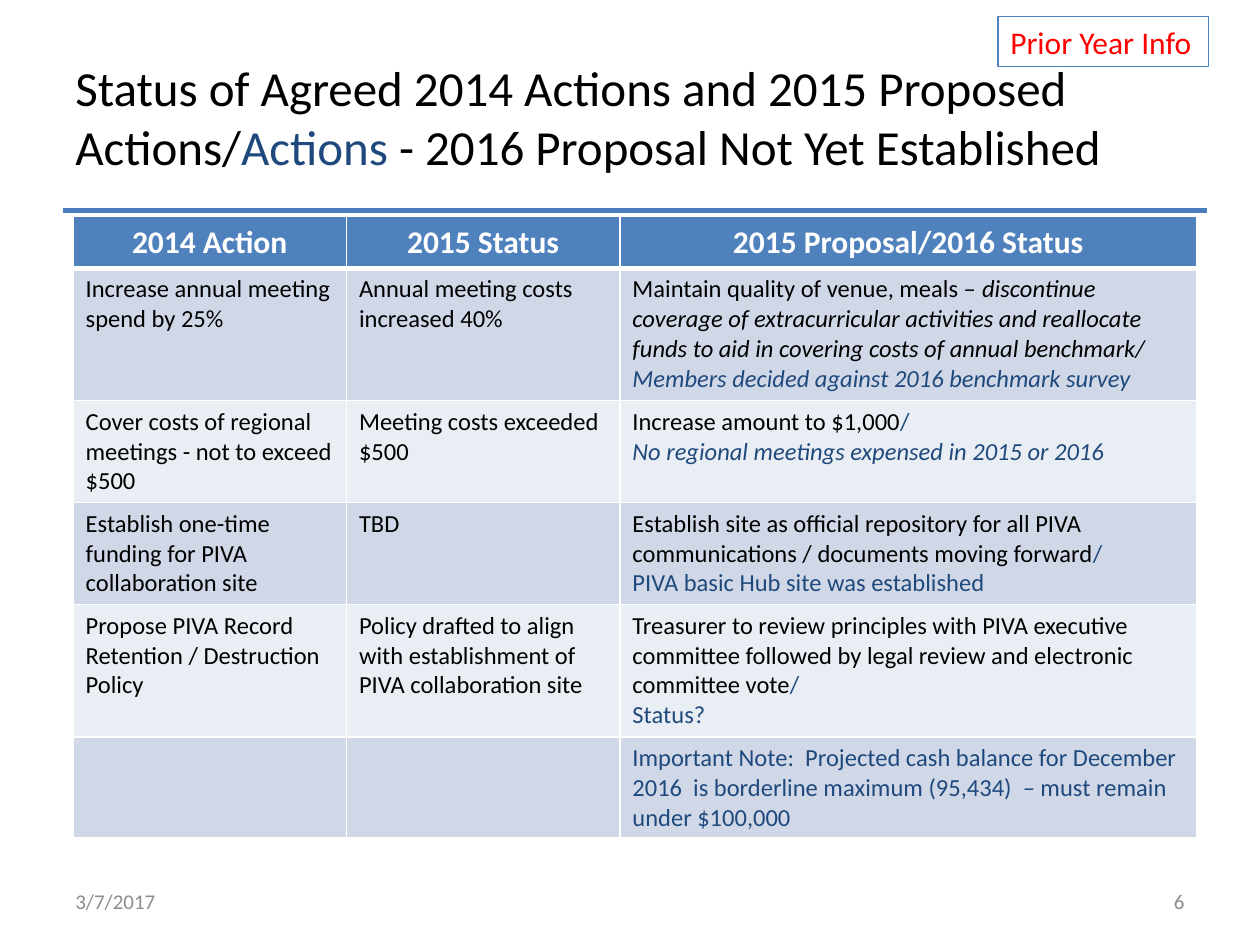
import pptx
import pptx.util
import pptx.dml.color
import pptx.enum.shapes
import pptx.enum.text
import pptx.oxml
import pptx.oxml.ns

theme = {
    "font": "Calibri",
    "ink": "000000", "navy": "1F497D", "blue": "4F81BD", "rule": "4B7EBC",
    "red": "FF0000", "grey": "8C8C8C", "white": "FFFFFF",
    "bands": ["D0D8E8", "E9EDF4"],
    "title": 28, "head": 18, "body": 14, "foot": 12,
}
rgb = pptx.dml.color.RGBColor.from_string
align = pptx.enum.text.PP_ALIGN
middle = pptx.enum.text.MSO_ANCHOR.MIDDLE

deck = pptx.Presentation()
deck.slide_width = pptx.util.Inches(10)
deck.slide_height = pptx.util.Inches(7.5)
slide = deck.slides.add_slide(deck.slide_layouts[6])
shapes = slide.shapes


def grid(*units):
    """Turn units of a 100 by 75 grid into slide lengths."""
    return [round(deck.slide_width * n / 100) for n in units]


def write(frame, lines, size, color="ink", side=align.LEFT, bold=False):
    """Write lines of (text, color, italic) runs into a text frame."""
    frame.word_wrap = True
    for at, line in enumerate(lines):
        para = frame.paragraphs[0] if at == 0 else frame.add_paragraph()
        para.alignment = side
        para.font.name = theme["font"]
        para.font.size = pptx.util.Pt(size)
        para.font.bold = bold
        for text, hue, slant in line:
            run = para.add_run()
            run.text = text
            run.font.color.rgb = rgb(theme[hue or color])
            if slant:
                run.font.italic = True


# Rule under the title
rule = shapes.add_connector(pptx.enum.shapes.MSO_CONNECTOR.STRAIGHT,
                            *grid(5, 16.7, 95.8, 16.7))
rule.line.color.rgb = rgb(theme["rule"])
rule.line.width = pptx.util.Pt(3)
rule._element.spPr.append(pptx.oxml.parse_xml(
    f'<a:effectLst {pptx.oxml.ns.nsdecls("a")}/>'))

# Title, date and page number
title = [("Status of Agreed 2014 Actions and 2015 Proposed Actions/", "", False),
         ("Actions ", "navy", False),
         ("- 2016 Proposal Not Yet Established", "", False)]
for spot, line, size, color, side in [
        ((5, 3, 90, 12.5), title, "title", "ink", align.LEFT),
        ((5, 69.5, 23.3, 4), [("3/7/2017", "", False)], "foot", "grey", align.LEFT),
        ((71.7, 69.5, 23.3, 4), [("6", "", False)], "foot", "grey", align.RIGHT)]:
    frame = shapes.add_textbox(*grid(*spot)).text_frame
    frame.vertical_anchor = middle
    write(frame, [line], theme[size], color, side)

# Table wording: each cell is a list of lines, each line a list of runs
heads = ["2014 Action", "2015 Status", "2015 Proposal/2016 Status"]
slash = ("/", "navy", False)
rows = [
    ("Increase annual meeting spend by 25%",
     "Annual meeting costs increased 40%",
     [[("Maintain quality of venue, meals – ", "", False),
       ("discontinue coverage of extracurricular activities and reallocate "
        "funds to aid in covering costs of annual benchmark/", "", True)],
      [("Members decided against 2016 benchmark survey", "navy", True)]]),
    ("Cover costs of regional meetings - not to exceed $500",
     "Meeting costs exceeded $500",
     [[("Increase amount to $1,000", "", False), slash],
      [("No regional meetings expensed in 2015 or 2016", "navy", True)]]),
    ("Establish one-time funding for PIVA collaboration site",
     "TBD",
     [[("Establish site as official repository for all PIVA communications "
        "/ documents moving forward", "", False), slash],
      [("PIVA basic Hub site was established", "navy", False)]]),
    ("Propose PIVA Record Retention / Destruction Policy",
     "Policy drafted to align with establishment of PIVA collaboration site",
     [[("Treasurer to review principles with PIVA executive committee followed "
        "by legal review and electronic committee vote", "", False), slash],
      [("Status?", "navy", False)]]),
    ("", "",
     [[("Important Note:  Projected cash balance for December 2016  is "
        "borderline maximum (95,434)  – must remain under $100,000",
        "navy", False)]]),
]

# Table grid
wide = grid(21.7, 21.7, 45.8)
tall = grid(4.1, 10.5, 8.1, 8.1, 10.5, 8)
table = shapes.add_table(len(tall), len(wide), *grid(5.8, 17.2),
                         sum(wide), sum(tall)).table
for col, width in zip(table.columns, wide):
    col.width = width
for row, height in zip(table.rows, tall):
    row.height = height

# Table cells with white borders, thicker around the header's foot
for r, row in enumerate([heads] + rows):
    for c, words in enumerate(row):
        cell = table.cell(r, c)
        lines = [[(words, "", False)]] if isinstance(words, str) else words
        if r == 0:
            write(cell.text_frame, lines, theme["head"], "white", align.CENTER, True)
        elif words:
            write(cell.text_frame, lines, theme["body"])
        props = cell._tc.get_or_add_tcPr()
        for edge in "LRTB":
            thick = 3 if (r, edge) in [(0, "B"), (1, "T")] else 1
            props.append(pptx.oxml.parse_xml(
                f'<a:ln{edge} {pptx.oxml.ns.nsdecls("a")} w="{pptx.util.Pt(thick)}">'
                f'<a:solidFill><a:srgbClr val="{theme["white"]}"/></a:solidFill>'
                f'</a:ln{edge}>'))
        cell.fill.solid()
        cell.fill.fore_color.rgb = rgb(theme["bands"][(r - 1) % 2] if r else theme["blue"])

# Tag in the top corner
tag = shapes.add_shape(pptx.enum.shapes.MSO_SHAPE.RECTANGLE, *grid(79.2, 1.3, 16.7, 4))
tag.shadow.inherit = False
tag.fill.background()
tag.line.color.rgb = rgb(theme["blue"])
tag.line.width = pptx.util.Pt(0.75)
write(tag.text_frame, [[("Prior Year Info", "", False)]], theme["head"], "red")

deck.save("out.pptx")
